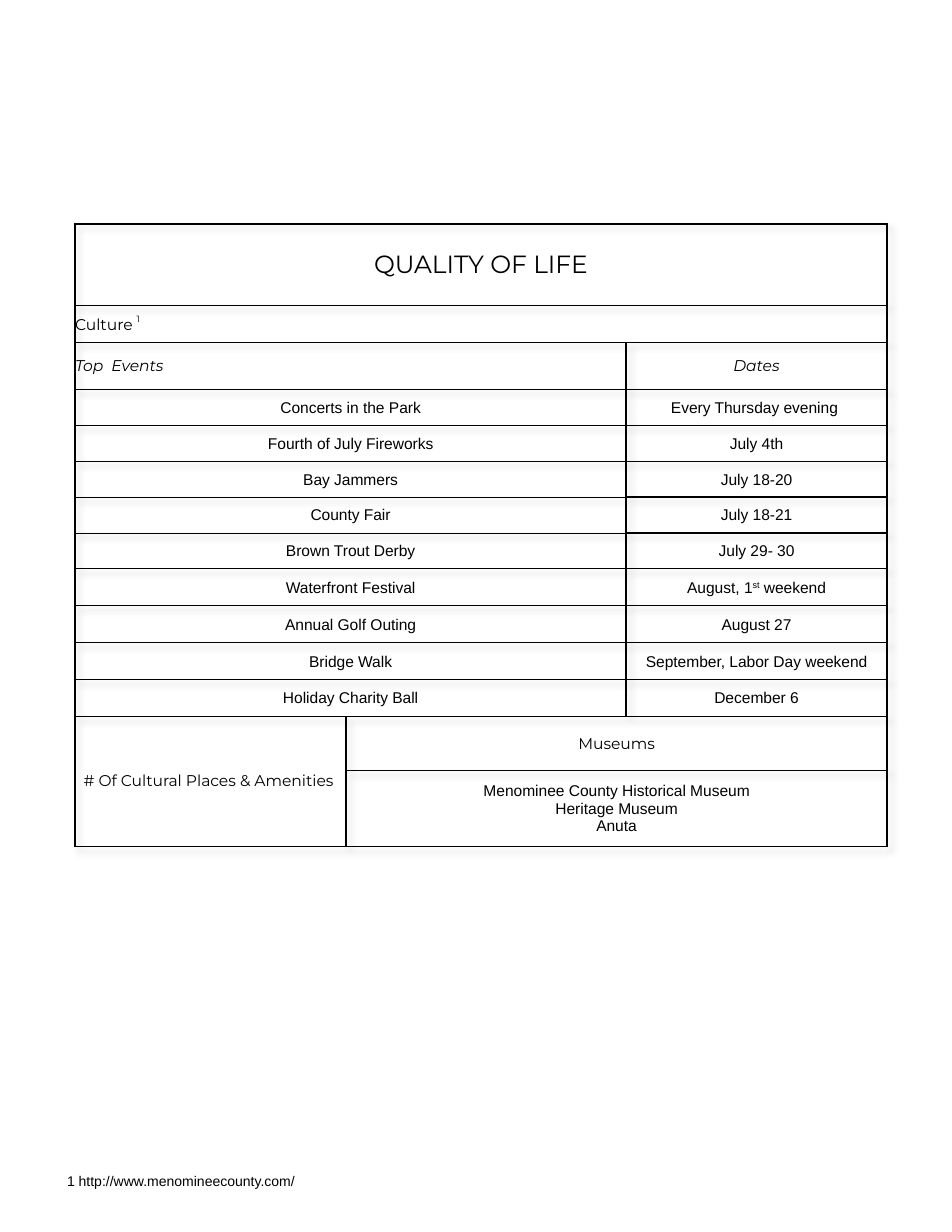
from dataclasses import dataclass

from lxml.etree import SubElement as Sub
from pptx import Presentation
from pptx.dml.color import RGBColor as RGB
from pptx.enum.text import MSO_ANCHOR as Anchor, PP_ALIGN as Align
from pptx.oxml.ns import qn
from pptx.util import Emu, Pt

PX = 9144  # 100 px to the inch


@dataclass(frozen=True)
class Theme:
    ink: str = "000000"
    head: str = "Montserrat"
    body: str = "Arial"
    title: int = 16
    text: int = 10
    note: int = 9
    rule: float = 1
    thin: float = 0.5


class Page:
    def __init__(self, theme, wide, high):
        self.theme = theme
        self.deck = Presentation()
        self.deck.slide_width, self.deck.slide_height = Emu(wide * PX), Emu(high * PX)
        self.slide = self.deck.slides.add_slide(self.deck.slide_layouts[6])

    def label(self, frame, lines, align=Align.LEFT, **style):
        """Fill a frame; a line is a string or a list of (text, baseline) runs."""
        for i, line in enumerate(lines):
            para = frame.add_paragraph() if i else frame.paragraphs[0]
            para.alignment = align
            for text, base in [(line, 0)] if isinstance(line, str) else line:
                run = para.add_run()
                run.text = text
                run.font.color.rgb = RGB.from_string(self.theme.ink)
                for name, value in style.items():
                    setattr(run.font, name, value)
                if base:
                    run.font._element.set("baseline", str(base * 1000))

    def grid(self, left, top, cols, rows):
        frame = self.slide.shapes.add_table(
            len(rows), len(cols), Emu(left * PX), Emu(top * PX),
            Emu(sum(cols) * PX), Emu(sum(rows) * PX))
        table = frame.table
        table.first_row = table.horz_banding = False
        for col, wide in zip(table.columns, cols):
            col.width = Emu(wide * PX)
        for row, high in zip(table.rows, rows):
            row.height = Emu(high * PX)
        self.shade(table)
        return table

    def shade(self, table):
        """Give the whole table a soft shadow to the lower right."""
        props = table._tbl.tblPr
        group = props.makeelement(qn("a:effectLst"), {})
        props.insert(0, group)
        cast = Sub(group, qn("a:outerShdw"), blurRad="50800", dist="50800",
                   dir="2700000", algn="tl", rotWithShape="0")
        tint = Sub(cast, qn("a:srgbClr"), val=self.theme.ink)
        Sub(tint, qn("a:alpha"), val="20000")

    def edge(self, cell, flat):
        """Rule all four sides; flat is the width of the level ones."""
        props = cell._tc.get_or_add_tcPr()
        for side in "LRTB":
            width = flat if side in "TB" else self.theme.rule
            line = Sub(props, qn(f"a:ln{side}"), w=str(int(Pt(width))))
            fill = Sub(line, qn("a:solidFill"))
            Sub(fill, qn("a:srgbClr"), val=self.theme.ink)
        cell.fill.background()

    def cell(self, table, row, col, lines, pad=0, last=None, align=Align.CENTER, **style):
        """Set the text of a cell that may span down and across to last."""
        cell = table.cell(row, col)
        if last:
            cell.merge(table.cell(*last))
        look = {"margin_left": pad * PX, "margin_right": pad * PX, "margin_top": pad * PX,
                "margin_bottom": 0, "vertical_anchor": Anchor.MIDDLE}
        for name, value in look.items():
            setattr(cell, name, value)
        font = {"name": self.theme.head, "size": Pt(self.theme.text)} | style
        self.label(cell.text_frame, lines, align, **font)

    def note(self, left, top, wide, high, text):
        box = self.slide.shapes.add_textbox(*(Emu(n * PX) for n in (left, top, wide, high)))
        box.text_frame.word_wrap = True
        self.label(box.text_frame, [text], name=self.theme.body, size=Pt(self.theme.note))


EVENTS = [
    ("Concerts in the Park", "Every Thursday evening "),
    ("Fourth of July Fireworks", "July 4th"),
    ("Bay Jammers", "July 18-20"),
    ("County Fair", "July 18-21"),
    ("Brown Trout Derby", "July 29- 30"),
    ("Waterfront Festival", [("August, 1", 0), ("st", 30), (" weekend", 0)]),
    ("Annual Golf Outing", "August 27"),
    ("Bridge Walk", "September, Labor Day weekend"),
    ("Holiday Charity Ball", "December 6"),
]
PLACES = ["Menominee County Historical Museum", "Heritage Museum", "Anuta"]


def main():
    theme = Theme()
    page = Page(theme, 850, 1100)
    rows = [73, 33, 42] + [32] * 5 + [33] * 4 + [48, 68]
    table = page.grid(67, 200, [242, 250, 233], rows)
    first = 3
    end = first + len(EVENTS)

    for r in range(len(rows)):
        for c in range(3):
            thin = (first <= r < end and c < 2) or (r >= end and c == 0)
            page.edge(table.cell(r, c), theme.thin if thin else theme.rule)

    page.cell(table, 0, 0, ["QUALITY OF LIFE"], last=(0, 2), size=Pt(theme.title))
    page.cell(table, 1, 0, [[("Culture ", 0), ("1", 50)]], last=(1, 2), align=Align.LEFT)
    page.cell(table, 2, 0, ["Top  Events"], last=(2, 1), align=Align.LEFT, italic=True)
    page.cell(table, 2, 2, ["Dates"], italic=True)
    for r, (event, date) in enumerate(EVENTS, first):
        page.cell(table, r, 0, [event], pad=1, last=(r, 1), name=theme.body)
        page.cell(table, r, 2, [date], pad=1, name=theme.body)
    page.cell(table, end, 0, ["# Of Cultural Places & Amenities "], last=(end + 1, 0))
    page.cell(table, end, 1, ["Museums"], pad=1, last=(end, 2))
    page.cell(table, end + 1, 1, PLACES, pad=1, last=(end + 1, 2), name=theme.body)

    page.note(50, 1042, 425, 25, "1 http://www.menomineecounty.com/")
    page.deck.save("out.pptx")


if __name__ == "__main__":
    main()
